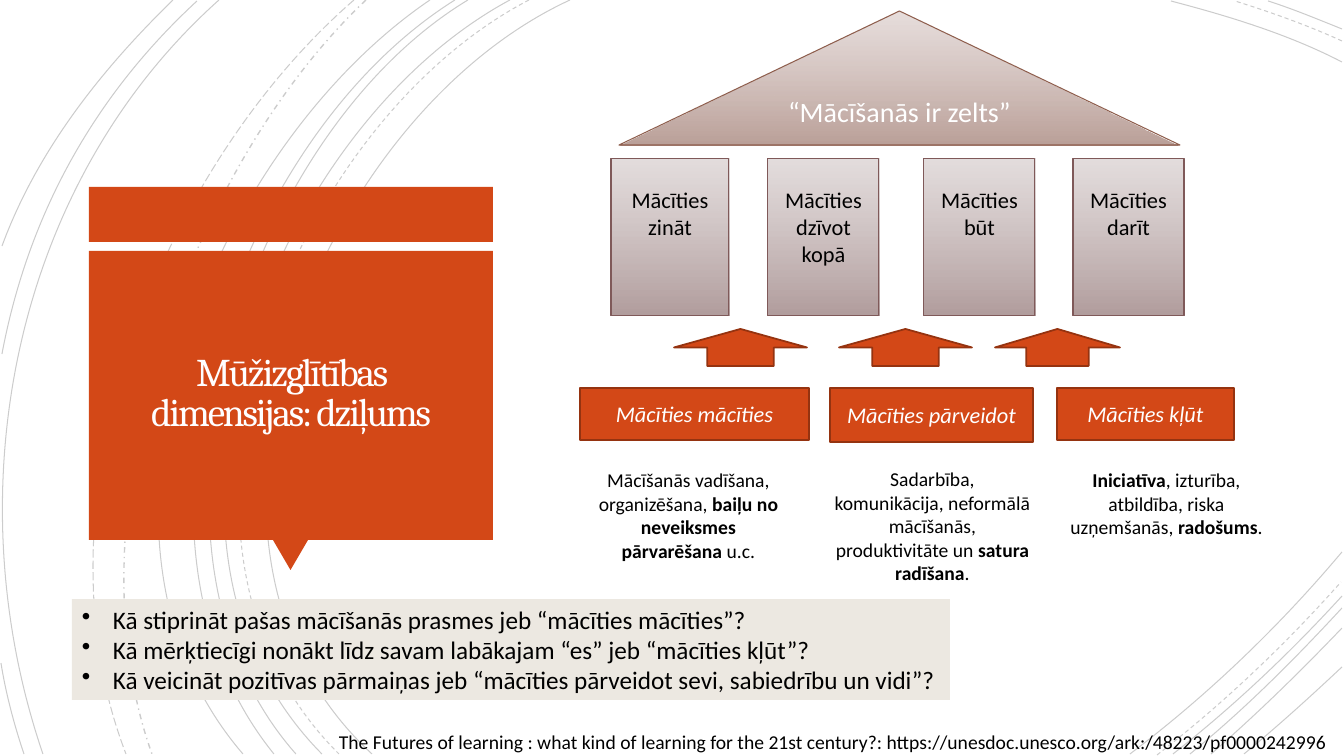
import pptx
import pptx.util
import pptx.dml.color
import pptx.enum.dml
import pptx.enum.shapes
import pptx.enum.text
import pptx.oxml
import pptx.oxml.ns

PX = 12192000 / 1344
SHAPE = pptx.enum.shapes.MSO_SHAPE
DASH = pptx.enum.dml.MSO_LINE
ALIGN = pptx.enum.text.PP_ALIGN
ANCHOR = pptx.enum.text.MSO_ANCHOR
COLORS = {
    "black": "000000", "white": "FFFFFF", "title": "FFFEFF",
    "orange": "D34817", "orange_edge": "953310", "panel": "ECE8E1",
    "pillar_top": "D1C6C6", "pillar_base": "AB9595", "pillar_edge": "7F5959",
    "roof_top": "D7C8C5", "roof_base": "B59890", "roof_edge": "8E5E4D",
}
SOLID_ARCS = [
    (570, 0, 318, 116, 144, 544, 372, 754), (1342, 62, 1288, 34, 1228, 16, 1171, 1),
    (1130, 754, 1207, 696, 1279, 627, 1342, 552), (510, 0, 272, 128, 111, 541, 322, 754),
    (1342, 29, 1317, 19, 1293, 9, 1268, 1), (1173, 754, 1233, 707, 1290, 653, 1342, 596),
    (468, 0, 246, 134, 111, 545, 296, 754), (1190, 754, 1244, 710, 1294, 660, 1342, 608),
    (455, 0, 233, 139, 98, 537, 274, 754), (1211, 754, 1256, 715, 1300, 672, 1342, 628),
    (430, 0, 212, 148, 53, 533, 243, 754), (1244, 754, 1277, 727, 1309, 698, 1342, 667),
    (219, 0, 11, 186, -46, 494, 43, 754), (197, 1, 93, 97, 28, 216, 2, 354),
    (1, 663, 6, 694, 14, 724, 24, 754), (173, 0, 101, 70, 37, 151, 2, 246),
]
DASHED_ARCS = [
    (529, 0, 287, 126, 124, 541, 339, 754), (1342, 41, 1307, 25, 1270, 12, 1235, 1),
    (1157, 755, 1223, 704, 1285, 645, 1341, 582),
]
ARCS = [
    (SOLID_ARCS, DASH.SOLID, 0.75),
    (DASHED_ARCS, DASH.DASH, 0.75),
    ([(366, 0, 189, 167, 66, 513, 152, 754)], DASH.DASH_DOT, 1),
    ([(354, 0, 158, 170, 29, 503, 126, 754)], DASH.LONG_DASH, 0.75),
]
PILLARS = [
    (31, 118, "Mācīties zināt"), (188, 111, "Mācīties dzīvot kopā"),
    (344, 111, "Mācīties būt"), (493, 111, "Mācīties darīt"),
]
ARROWS = [(94, 133), (259, 133), (415, 125)]
SKILLS = [
    (0, 229, 52, "Mācīties mācīties"), (250, 203, 54, "Mācīties pārveidot"),
    (477, 177, 52, "Mācīties kļūt"),
]
DETAILS = [
    (0, 75, [("Mācīšanās vadīšana, organizēšana, ", False),
             ("baiļu no neveiksmes pārvarēšana ", True), ("u.c.", False)]),
    (244, 74, [("Sadarbība, komunikācija, neformālā mācīšanās, produktivitāte un ", False),
               ("satura radīšana", True), (".", False)]),
    (478, 75, [("Iniciatīva", True), (", izturība, atbildība, riska uzņemšanās, ", False),
               ("radošums", True), (".", False)]),
]
QUESTIONS = [
    "Kā stiprināt pašas mācīšanās prasmes jeb “mācīties mācīties”?",
    "Kā mērķtiecīgi nonākt līdz savam labākajam “es” jeb “mācīties kļūt”?",
    "Kā veicināt pozitīvas pārmaiņas jeb “mācīties pārveidot sevi, sabiedrību un vidi”?",
]
SOURCE = ("The Futures of learning : what kind of learning for the 21st century?: "
          "https://unesdoc.unesco.org/ark:/48223/pf0000242996")


def px(n):
    """Turn px into EMU."""
    return pptx.util.Emu(round(n * PX))


def rgb(name):
    """Look up a named colour."""
    return pptx.dml.color.RGBColor.from_string(COLORS[name])


def set_alpha(clr, percent):
    """Give a colour element an opacity."""
    pptx.oxml.ns.qn("a:alpha")
    alpha = clr.makeelement(pptx.oxml.ns.qn("a:alpha"), {"val": str(percent * 1000)})
    clr.append(alpha)


def add_shape(slide, kind, x, y, w, h, fill="orange", edge=None, weight=1.25):
    """Add a preset shape, with a gradient when fill is a pair."""
    sp = slide.shapes.add_shape(kind, px(x), px(y), px(w), px(h))
    sp.shadow.inherit = False
    if isinstance(fill, tuple):
        sp.fill.gradient()
        sp.fill.gradient_angle = 270
        for stop, name, percent in zip(sp.fill.gradient_stops, fill, (60, 92)):
            stop.color.rgb = rgb(name)
        for clr, percent in zip(sp.element.spPr.iterfind(".//" + pptx.oxml.ns.qn("a:gs")), (60, 92)):
            set_alpha(clr[0], percent)
    else:
        sp.fill.solid()
        sp.fill.fore_color.rgb = rgb(fill)
    if edge:
        sp.line.color.rgb = rgb(edge)
        sp.line.width = pptx.util.Pt(weight)
    else:
        sp.line.fill.background()
    return sp


def add_text_box(slide, x, y, w, h):
    """Add a wrapping text box."""
    sp = slide.shapes.add_textbox(px(x), px(y), px(w), px(h))
    sp.text_frame.word_wrap = True
    return sp


def style(p, size, color="black", align=ALIGN.CENTER, font="Calibri"):
    """Set the alignment and font of a paragraph."""
    p.alignment = align
    p.font.size = pptx.util.Pt(size)
    p.font.name = font
    p.font.color.rgb = rgb(color)


def draw_arcs(slide):
    """Draw the thin background arcs as cubic curves."""
    qn = pptx.oxml.ns.qn
    for arcs, dash, weight in ARCS:
        for x, y, *rest in arcs:
            fb = slide.shapes.build_freeform(x, y, scale=PX)
            fb.add_line_segments(list(zip(rest[::2], rest[1::2])), close=False)
            sp = fb.convert_to_shape()
            path = sp.element.find(".//" + qn("a:path"))
            curve = path.makeelement(qn("a:cubicBezTo"), {})
            for segment in path.findall(qn("a:lnTo")):
                curve.append(segment[0])
                path.remove(segment)
            path.append(curve)
            sp.shadow.inherit = False
            sp.fill.background()
            sp.line.color.rgb = rgb("black")
            sp.line.width = pptx.util.Pt(weight)
            sp.line.dash_style = dash
            set_alpha(sp.element.spPr.find(".//" + qn("a:srgbClr")), 20)


def draw_title(slide, x, y, w, h):
    """Draw the title callout with its top band and pointer."""
    add_shape(slide, SHAPE.RECTANGLE, x, y, w, 55)
    pointer = add_shape(slide, SHAPE.ISOSCELES_TRIANGLE, x + 184, y + h - 30, 35, 30)
    pointer.rotation = 180
    add_shape(slide, SHAPE.RECTANGLE, x, y + 64, w, h - 94)
    tf = add_text_box(slide, x + 9, y + 72, w - 18, h - 112).text_frame
    tf.margin_left = tf.margin_right = tf.margin_top = tf.margin_bottom = px(25)
    tf.vertical_anchor = ANCHOR.MIDDLE
    p = tf.paragraphs[0]
    r = p.add_run()
    r.text = "Mūžizglītības dimensijas: dziļums"
    r._r.get_or_add_rPr().set("spc", "-150")
    style(p, 28, "title", font="Cambria")
    p.line_spacing = 0.85


def draw_temple(slide, x, y):
    """Draw the roof, pillars, arrows and skill blocks."""
    for dx, w, text in PILLARS:
        sp = add_shape(slide, SHAPE.FLOWCHART_PROCESS, x + dx, y + 148, w, 157,
                       ("pillar_top", "pillar_base"), "pillar_edge", 0.75)
        tf = sp.text_frame
        tf.vertical_anchor = ANCHOR.TOP
        tf.margin_top = px(27)
        tf.text = text
        style(tf.paragraphs[0], 16)
    for dx, w, h, text in SKILLS:
        sp = add_shape(slide, SHAPE.FLOWCHART_PROCESS, x + dx, y + 377, w, h, edge="orange_edge")
        sp.text_frame.text = text
        p = sp.text_frame.paragraphs[0]
        style(p, 16, "white")
        p.font.italic = True
    roof = add_shape(slide, SHAPE.ISOSCELES_TRIANGLE, x + 39, y, 561, 134,
                     ("roof_top", "roof_base"), "roof_edge", 0.75)
    roof.text_frame.text = "“Mācīšanās ir zelts”"
    style(roof.text_frame.paragraphs[0], 20, "white")
    for dx, w in ARROWS:
        add_shape(slide, SHAPE.UP_ARROW, x + dx, y + 318, w, 37, edge="orange_edge")


def draw_details(slide, x, y, w, h):
    """Write the description under each skill block."""
    for dx, dy, runs in DETAILS:
        p = add_text_box(slide, x + dx, y + dy - 75, w, h).text_frame.paragraphs[0]
        style(p, 14)
        for text, bold in runs:
            r = p.add_run()
            r.text = text
            r.font.bold = bold


def draw_questions(slide, x, y, w, h):
    """Draw the panel of bulleted questions."""
    tf = add_shape(slide, SHAPE.RECTANGLE, x, y, w, h, "panel").text_frame
    tf.vertical_anchor = ANCHOR.TOP
    tf.text = "\n".join(QUESTIONS)
    for p in tf.paragraphs:
        style(p, 18, align=ALIGN.LEFT)
        pPr = p._p.get_or_add_pPr()
        pPr.set("marL", str(px(31)))
        pPr.set("indent", str(px(-31)))
        bullet = pPr.makeelement(pptx.oxml.ns.qn("a:buChar"), {"char": "•"})
        pPr.insert(0, bullet)


def draw_source(slide, x, y, w, h):
    """Write the source line at the foot."""
    tf = add_text_box(slide, x, y, w, h).text_frame
    tf.word_wrap = False
    tf.text = SOURCE
    style(tf.paragraphs[0], 14, align=ALIGN.LEFT)


def main():
    """Build and save the slide."""
    prs = pptx.Presentation()
    prs.slide_width, prs.slide_height = px(1344), px(756)
    slide = prs.slides.add_slide(prs.slide_layouts[6])
    draw_arcs(slide)
    draw_title(slide, 89, 187, 404, 383)
    draw_temple(slide, 580, 11)
    draw_questions(slide, 72, 599, 878, 101)
    draw_details(slide, 580, 463, 217, 105)
    draw_source(slide, 329, 725, 1018, 34)
    prs.save("out.pptx")


if __name__ == "__main__":
    main()
